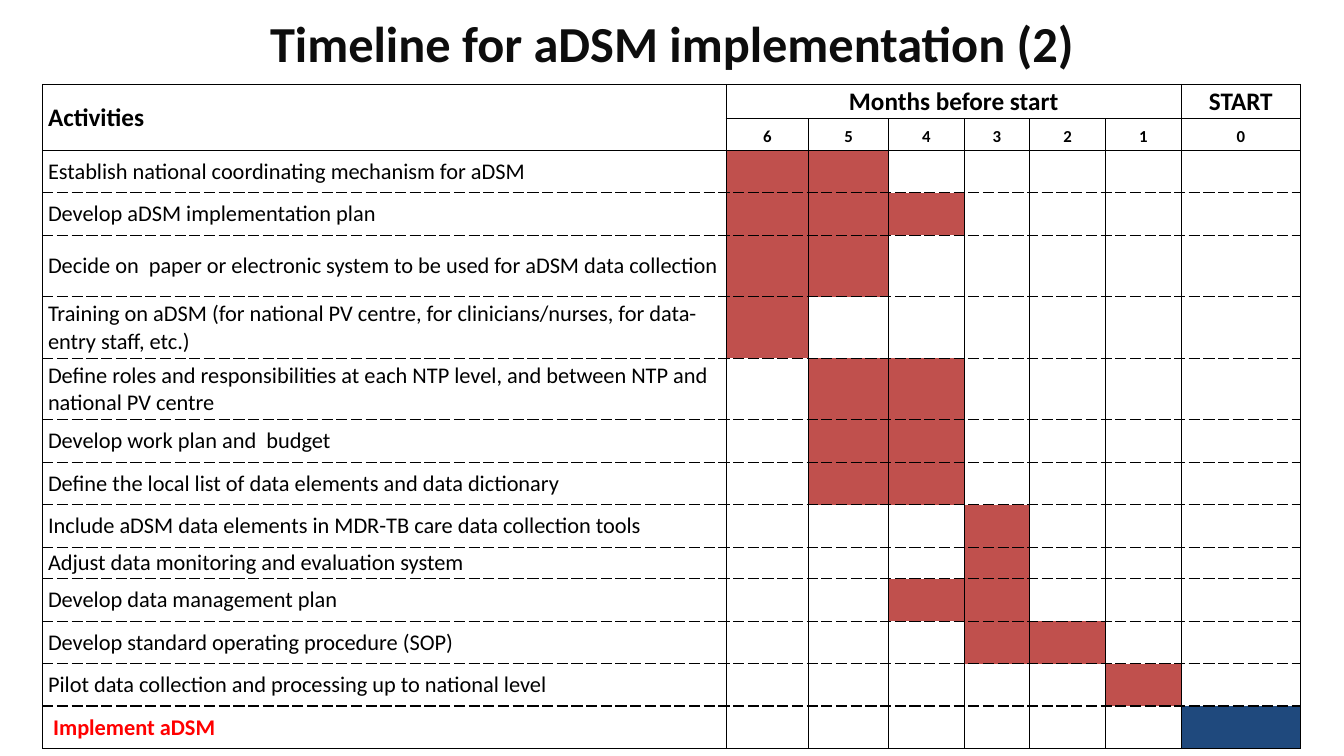
from dataclasses import dataclass

from lxml.etree import SubElement
from pptx import Presentation
from pptx.enum.text import MSO_ANCHOR, MSO_AUTO_SIZE, PP_ALIGN
from pptx.dml.color import RGBColor
from pptx.oxml.ns import qn
from pptx.table import _Cell
from pptx.util import Cm, Pt

COLORS = {
    "title": "0D0D0D",
    "text": "000000",
    "paper": "FFFFFF",
    "planned": "C0504D",
    "start": "1F497D",
    "launch": "FF0000",
}
FONT = "Calibri"
MONTHS = [6, 5, 4, 3, 2, 1, 0]
COLUMN_WIDTHS = [17.22, 2.08, 2.01, 1.91, 1.65, 1.91, 1.91, 3.0]
HEADER_HEIGHTS = [0.86, 0.79]
LOW, NORMAL, TALL = 0.79, 1.07, 1.55


@dataclass
class Activity:
    name: str
    first_month: int
    last_month: int
    height: float = NORMAL


ACTIVITIES = [
    Activity("Establish national coordinating mechanism for aDSM", 6, 5),
    Activity("Develop aDSM implementation plan", 6, 4),
    Activity("Decide on  paper or electronic system to be used for aDSM data collection", 6, 5, TALL),
    Activity("Training on aDSM (for national PV centre, for clinicians/nurses, "
             "for data-entry staff, etc.)", 6, 6, TALL),
    Activity("Define roles and responsibilities at each NTP level, "
             "and between NTP and national PV centre", 5, 4, TALL),
    Activity("Develop work plan and  budget", 5, 4),
    Activity("Define the local list of data elements and data dictionary", 5, 4),
    Activity("Include aDSM data elements in MDR-TB care data collection tools", 3, 3),
    Activity("Adjust data monitoring and evaluation system", 3, 3, LOW),
    Activity("Develop data management plan", 4, 3),
    Activity("Develop standard operating procedure (SOP)", 3, 2),
    Activity("Pilot data collection and processing up to national level", 1, 1),
    Activity("Implement aDSM", 0, 0),
]


def color(name: str) -> RGBColor:
    return RGBColor.from_string(COLORS[name])


def style_cell(cell: _Cell, fill: str, top: str = "solid", bottom: str = "solid") -> None:
    """Set margins, fill and the four one-point borders."""
    cell.vertical_anchor = MSO_ANCHOR.MIDDLE
    cell.margin_left = cell.margin_right = Cm(0.13)
    cell.margin_top, cell.margin_bottom = Cm(0.02), Cm(0)
    cell.fill.solid()
    cell.fill.fore_color.rgb = color(fill)
    properties = cell._tc.get_or_add_tcPr()
    sides = {"lnL": "solid", "lnR": "solid", "lnT": top, "lnB": bottom}
    for position, (side, dash) in enumerate(sides.items()):
        border = SubElement(properties, qn(f"a:{side}"), w=str(Pt(1)))
        ink = SubElement(border, qn("a:solidFill"))
        SubElement(ink, qn("a:srgbClr"), val=COLORS["text"])
        SubElement(border, qn("a:prstDash"), val=dash)
        properties.insert(position, border)


def write(cell: _Cell, text: str, size: int, bold: bool = False,
          ink: str = "text", align: PP_ALIGN = PP_ALIGN.LEFT) -> None:
    cell.text = text
    paragraph = cell.text_frame.paragraphs[0]
    paragraph.alignment = align
    paragraph.font.name = FONT
    paragraph.font.size = Pt(size)
    paragraph.font.bold = bold
    paragraph.font.color.rgb = color(ink)


def add_title(slide) -> None:
    heading = slide.shapes.title
    heading.left, heading.top, heading.width, heading.height = Cm(5.51), Cm(-0.05), Cm(22.86), Cm(1.57)
    heading.text = "Timeline for aDSM implementation (2)"
    frame = heading.text_frame
    frame.auto_size = MSO_AUTO_SIZE.NONE
    frame.word_wrap = True
    frame.vertical_anchor = MSO_ANCHOR.TOP
    paragraph = frame.paragraphs[0]
    paragraph.alignment = PP_ALIGN.CENTER
    paragraph.line_spacing = 1.15
    paragraph.space_after = Pt(10)
    paragraph.font.name = FONT
    paragraph.font.size = Pt(36)
    paragraph.font.bold = True
    paragraph.font.color.rgb = color("title")


def add_timeline(slide) -> None:
    heights = HEADER_HEIGHTS + [activity.height for activity in ACTIVITIES]
    timeline = slide.shapes.add_table(
        len(heights), len(COLUMN_WIDTHS), Cm(1.08), Cm(2.13),
        Cm(sum(COLUMN_WIDTHS)), Cm(sum(heights))).table
    timeline.first_row = timeline.horz_banding = False
    for column, width in zip(timeline.columns, COLUMN_WIDTHS):
        column.width = Cm(width)
    for row, height in zip(timeline.rows, heights):
        row.height = Cm(height)

    # Header rows
    for row in range(len(HEADER_HEIGHTS)):
        for column in range(len(COLUMN_WIDTHS)):
            style_cell(timeline.cell(row, column), "paper")
    timeline.cell(0, 0).merge(timeline.cell(1, 0))
    timeline.cell(0, 1).merge(timeline.cell(0, 6))
    write(timeline.cell(0, 0), "Activities", 18, True)
    write(timeline.cell(0, 1), "Months before start", 18, True, align=PP_ALIGN.CENTER)
    write(timeline.cell(0, 7), "START", 18, True, align=PP_ALIGN.CENTER)
    for column, month in enumerate(MONTHS, start=1):
        month_cell = timeline.cell(1, column)
        write(month_cell, str(month), 12, True, align=PP_ALIGN.CENTER)
        month_cell.text_frame.paragraphs[0].line_spacing = 1.15

    # Activity rows with their planned months
    for row, activity in enumerate(ACTIVITIES, start=len(HEADER_HEIGHTS)):
        top = "solid" if activity is ACTIVITIES[0] else "dash"
        launch = activity is ACTIVITIES[-1]
        bottom = "solid" if launch else "dash"
        name_cell = timeline.cell(row, 0)
        style_cell(name_cell, "paper", top, bottom)
        write(name_cell, activity.name, 16, launch, "launch" if launch else "text")
        if launch:
            name_cell.margin_left = Cm(0.26)
        for column, month in enumerate(MONTHS, start=1):
            planned = activity.last_month <= month <= activity.first_month
            busy = "start" if month == 0 else "planned"
            style_cell(timeline.cell(row, column), busy if planned else "paper", top, bottom)


def main() -> None:
    deck = Presentation()
    deck.slide_width, deck.slide_height = Cm(33.87), Cm(19.05)
    slide = deck.slides.add_slide(deck.slide_layouts[5])
    add_timeline(slide)
    add_title(slide)
    deck.save("out.pptx")


if __name__ == "__main__":
    main()
